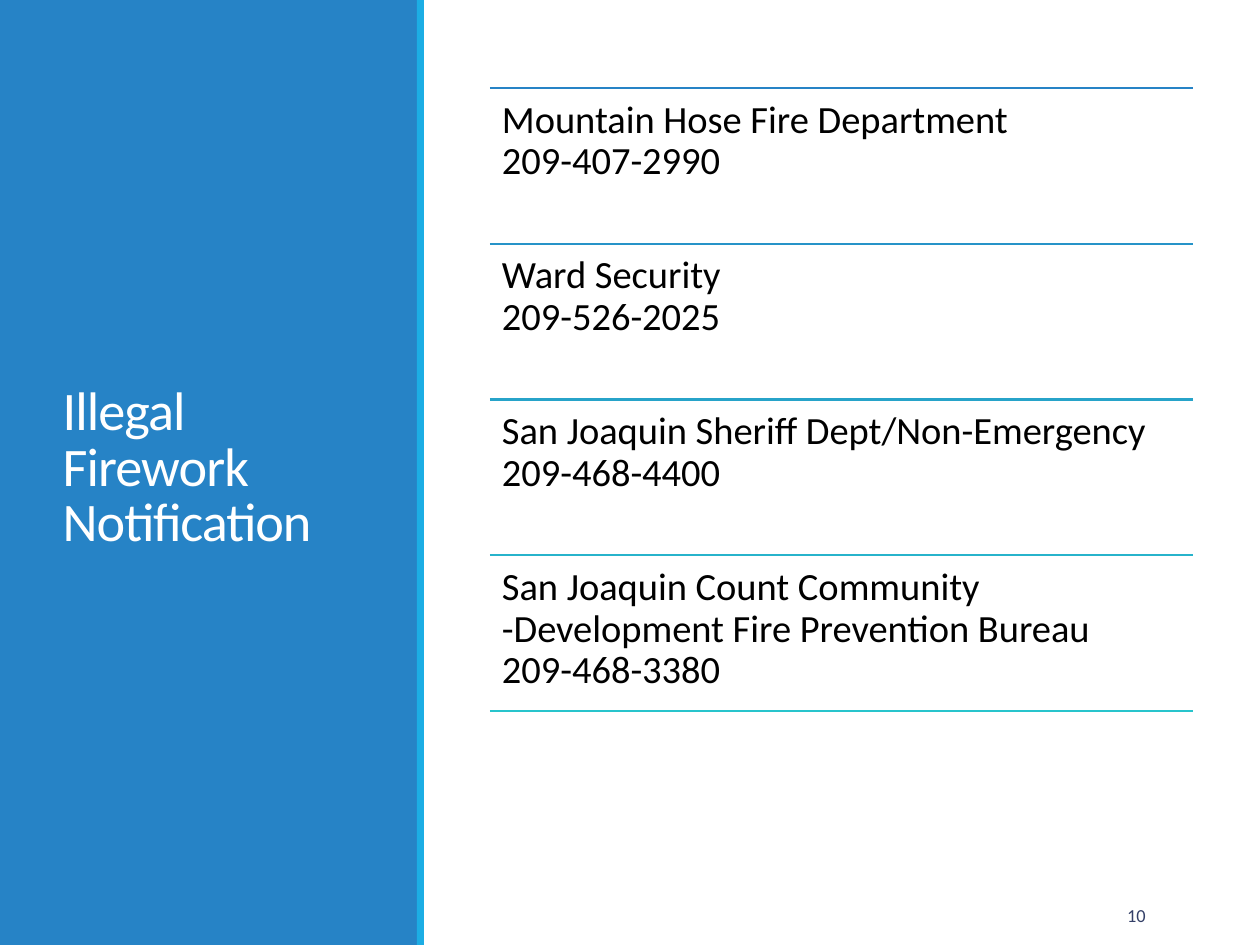
from lxml import etree
from pptx import Presentation
from pptx.dml.color import RGBColor
from pptx.enum.shapes import MSO_CONNECTOR, MSO_SHAPE
from pptx.enum.text import MSO_ANCHOR, MSO_AUTO_SIZE, PP_ALIGN
from pptx.oxml.ns import qn
from pptx.util import Emu, Pt

RECTANGLE = MSO_SHAPE.RECTANGLE
STRAIGHT = MSO_CONNECTOR.STRAIGHT
TOP, MIDDLE = MSO_ANCHOR.TOP, MSO_ANCHOR.MIDDLE
LEFT, RIGHT = PP_ALIGN.LEFT, PP_ALIGN.RIGHT
NO_AUTOFIT = MSO_AUTO_SIZE.NONE

PX_PER_INCH = 126
FONT = "Calibri"
BLUE, CYAN, WHITE, BLACK, NAVY = "2683C6", "1CADE4", "FFFFFF", "000000", "344068"
RULE_COLORS = [BLUE, "2693C8", "27A3C9", "27B3CB", "28C4CC"]

CONTACTS = [
    ["Mountain Hose Fire Department", "209-407-2990"],
    ["Ward Security", "209-526-2025"],
    ["San Joaquin Sheriff Dept/Non-Emergency", "209-468-4400"],
    ["San Joaquin Count Community", "-Development Fire Prevention Bureau", "209-468-3380"],
]


def px(value):
    return Emu(round(value * 914400 / PX_PER_INCH))


def color(hex_string):
    return RGBColor.from_string(hex_string)


def write_text(shape, text, size, text_color, anchor=TOP, align=LEFT,
               line_spacing=1.0, inset=None, tracking=None):
    """Fill a shape with one paragraph; a vertical tab in text breaks the line."""
    frame = shape.text_frame
    frame.word_wrap = True
    frame.auto_size = NO_AUTOFIT
    frame.vertical_anchor = anchor
    if inset is not None:
        frame.margin_left = frame.margin_right = px(inset)
        frame.margin_top = frame.margin_bottom = px(inset)
    paragraph = frame.paragraphs[0]
    paragraph.text = text
    paragraph.alignment = align
    paragraph.line_spacing = line_spacing
    for run in paragraph.runs:
        run.font.name = FONT
        run.font.size = Pt(size)
        run.font.color.rgb = color(text_color)
        if tracking is not None:
            run.font._element.set("spc", str(tracking))


def add_bar(slide, left, top, width, height, fill):
    bar = slide.shapes.add_shape(RECTANGLE, px(left), px(top), px(width), px(height))
    bar.shadow.inherit = False
    bar.fill.solid()
    bar.fill.fore_color.rgb = color(fill)
    bar.line.fill.background()
    return bar


def add_rule(slide, left, top, width, line_color):
    rule = slide.shapes.add_connector(STRAIGHT, px(left), px(top), px(left + width), px(top))
    rule.line.color.rgb = color(line_color)
    rule.line.width = Pt(1.25)
    etree.SubElement(rule.element.spPr, qn("a:effectLst"))


def add_title_panel(slide, left, top, width, height):
    title = slide.shapes.title
    panel = add_bar(slide, left, top, width, height, BLUE)
    edge = add_bar(slide, left + width - 1, top, 7, height, CYAN)
    for bar in (panel, edge):
        title.element.addprevious(bar.element)
    title.left, title.top = px(left + 50), px(top + 72)
    title.width, title.height = px(width - 99), px(height - 150)
    write_text(title, "Illegal Firework Notification", 31, WHITE, anchor=MIDDLE,
               line_spacing=0.85, tracking=-50)


def add_contact_list(slide, left, top, width, height):
    row_height = height / len(CONTACTS)
    for index, rule_color in enumerate(RULE_COLORS):
        add_rule(slide, left, top + index * row_height, width, rule_color)
    for index, lines in enumerate(CONTACTS):
        box = slide.shapes.add_textbox(px(left), px(top + index * row_height),
                                       px(width), px(row_height))
        write_text(box, "\v".join(lines), 22, BLACK, line_spacing=0.9, inset=12)


def add_slide_number(slide, left, top, width, height):
    box = slide.shapes.add_textbox(px(left), px(top), px(width), px(height))
    write_text(box, "10", 10.5, NAVY, anchor=MIDDLE, align=RIGHT)


def main():
    presentation = Presentation()
    presentation.slide_width, presentation.slide_height = px(1260), px(945)
    slide = presentation.slides.add_slide(presentation.slide_layouts[5])
    add_title_panel(slide, 0, 0, 418, 945)
    add_contact_list(slide, 490, 88, 703, 623)
    add_slide_number(slide, 1046, 890, 112, 50)
    presentation.save("out.pptx")


if __name__ == "__main__":
    main()
